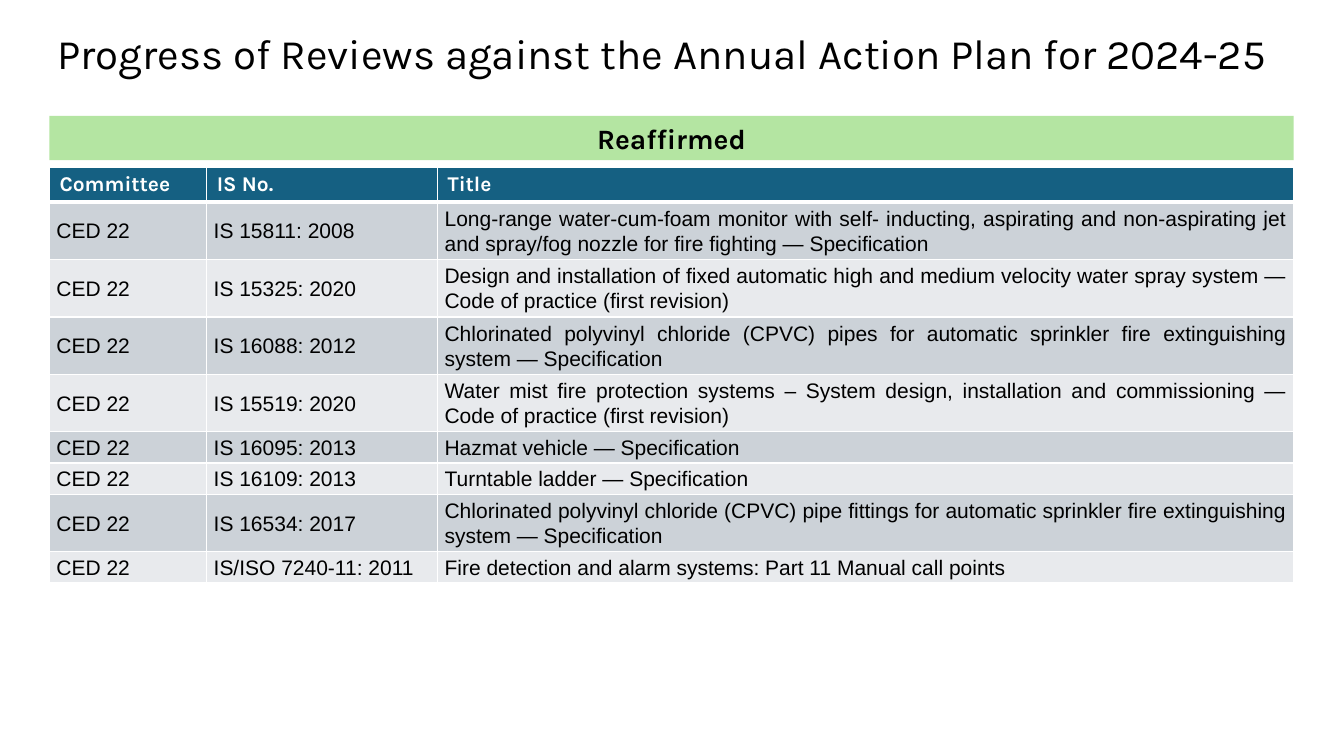
from pptx import Presentation
from pptx.dml.color import RGBColor
from pptx.enum.shapes import MSO_SHAPE as Shape
from pptx.enum.text import MSO_ANCHOR as Anchor, MSO_AUTO_SIZE as AutoSize, PP_ALIGN as Align
from pptx.oxml import parse_xml
from pptx.oxml.ns import nsdecls
from pptx.util import Inches, Pt

TITLE = "Progress of Reviews against the Annual Action Plan for 2024-25"
STATUS = "Reaffirmed"
HEADINGS = ("Committee", "IS No.", "Title")
COMMITTEE = "CED 22"
STANDARDS = [
    ("IS 15811: 2008", "Long-range water-cum-foam monitor with self- inducting, aspirating and "
     "non-aspirating jet and spray/fog nozzle for fire fighting ― Specification"),
    ("IS 15325: 2020", "Design and installation of fixed automatic high and medium velocity "
     "water spray system ― Code of practice (first revision)"),
    ("IS 16088: 2012", "Chlorinated polyvinyl chloride (CPVC) pipes for automatic sprinkler "
     "fire extinguishing system ― Specification"),
    ("IS 15519: 2020", "Water mist fire protection systems – System design, installation and "
     "commissioning ― Code of practice (first revision)"),
    ("IS 16095: 2013", "Hazmat vehicle ― Specification"),
    ("IS 16109: 2013", "Turntable ladder ― Specification"),
    ("IS 16534: 2017", "Chlorinated polyvinyl chloride (CPVC) pipe fittings for automatic "
     "sprinkler fire extinguishing system ― Specification"),
    ("IS/ISO 7240-11: 2011", "Fire detection and alarm systems: Part 11 Manual call points"),
]

BLACK = RGBColor(0x00, 0x00, 0x00)
WHITE = RGBColor(0xFF, 0xFF, 0xFF)
GREEN = RGBColor(0xB4, 0xE5, 0xA2)
TEAL = RGBColor(0x15, 0x60, 0x82)
BANDS = (RGBColor(0xCC, 0xD2, 0xD8), RGBColor(0xE8, 0xEA, 0xED))

LEFT, WIDTH = 0.49, 12.34
COLUMN_WIDTHS = (1.56, 2.29, 8.49)
HEADER_HEIGHT, ONE_LINE, TWO_LINES = 0.34, 0.31, 0.57
LINE_CAPACITY = 90  # characters that fit on one line of the Title column


def write(frame, text, size, font, color, bold=False, align=Align.LEFT, spacing=None):
    paragraph = frame.paragraphs[0]
    paragraph.alignment = align
    paragraph.line_spacing = spacing
    run = paragraph.add_run()
    run.text = text
    run.font.size = Pt(size)
    run.font.name = font
    run.font.bold = bold
    run.font.color.rgb = color


def fill_cell(cell, color, bottom_width=1):
    """Fill a cell and give it white borders, the bottom one of its own width."""
    cell.fill.solid()
    cell.fill.fore_color.rgb = color
    properties = cell._tc.get_or_add_tcPr()
    for index, side in enumerate(("lnL", "lnR", "lnT", "lnB")):
        width = Pt(bottom_width if side == "lnB" else 1)
        properties.insert(index, parse_xml(
            f'<a:{side} {nsdecls("a")} w="{width}"><a:solidFill>'
            f'<a:srgbClr val="{WHITE}"/></a:solidFill></a:{side}>'))


def add_title(slide):
    title = slide.shapes.title
    title.left, title.top = Inches(0.17), Inches(0.19)
    title.width, title.height = Inches(12.8), Inches(0.64)
    frame = title.text_frame
    frame.vertical_anchor = Anchor.BOTTOM
    frame.auto_size = AutoSize.NONE
    write(frame, TITLE, 30, "Karla", BLACK, align=Align.CENTER, spacing=0.9)


def add_status_band(slide):
    band = slide.shapes.add_shape(
        Shape.RECTANGLE, Inches(LEFT), Inches(1.15), Inches(WIDTH), Inches(0.44))
    band.shadow.inherit = False
    band.fill.solid()
    band.fill.fore_color.rgb = GREEN
    band.line.fill.background()
    band.text_frame.word_wrap = True
    write(band.text_frame, STATUS, 20, "Karla", BLACK, bold=True, align=Align.CENTER)


def add_standards_table(slide):
    heights = [HEADER_HEIGHT] + [
        TWO_LINES if len(title) > LINE_CAPACITY else ONE_LINE for _, title in STANDARDS]
    table = slide.shapes.add_table(
        len(heights), len(HEADINGS), Inches(LEFT), Inches(1.66),
        Inches(WIDTH), Inches(sum(heights))).table
    for column, width in zip(table.columns, COLUMN_WIDTHS):
        column.width = Inches(width)
    for row, height in zip(table.rows, heights):
        row.height = Inches(height)

    for column, heading in enumerate(HEADINGS):
        cell = table.cell(0, column)
        fill_cell(cell, TEAL, bottom_width=3)
        write(cell.text_frame, heading, 15, "Karla", WHITE, bold=True)

    for row, standard in enumerate(STANDARDS, start=1):
        for column, text in enumerate((COMMITTEE, *standard)):
            cell = table.cell(row, column)
            fill_cell(cell, BANDS[(row - 1) % 2])
            cell.vertical_anchor = Anchor.MIDDLE
            cell.margin_left = cell.margin_right = Inches(0.07)
            cell.margin_top = cell.margin_bottom = Inches(0.02)
            align = Align.JUSTIFY if HEADINGS[column] == "Title" else Align.LEFT
            write(cell.text_frame, text, 15, "Arial", BLACK, align=align, spacing=1.07)


def main():
    presentation = Presentation()
    presentation.slide_width, presentation.slide_height = Inches(13.33), Inches(7.5)
    slide = presentation.slides.add_slide(presentation.slide_layouts[5])
    add_title(slide)
    add_status_band(slide)
    add_standards_table(slide)
    presentation.save("out.pptx")


if __name__ == "__main__":
    main()
